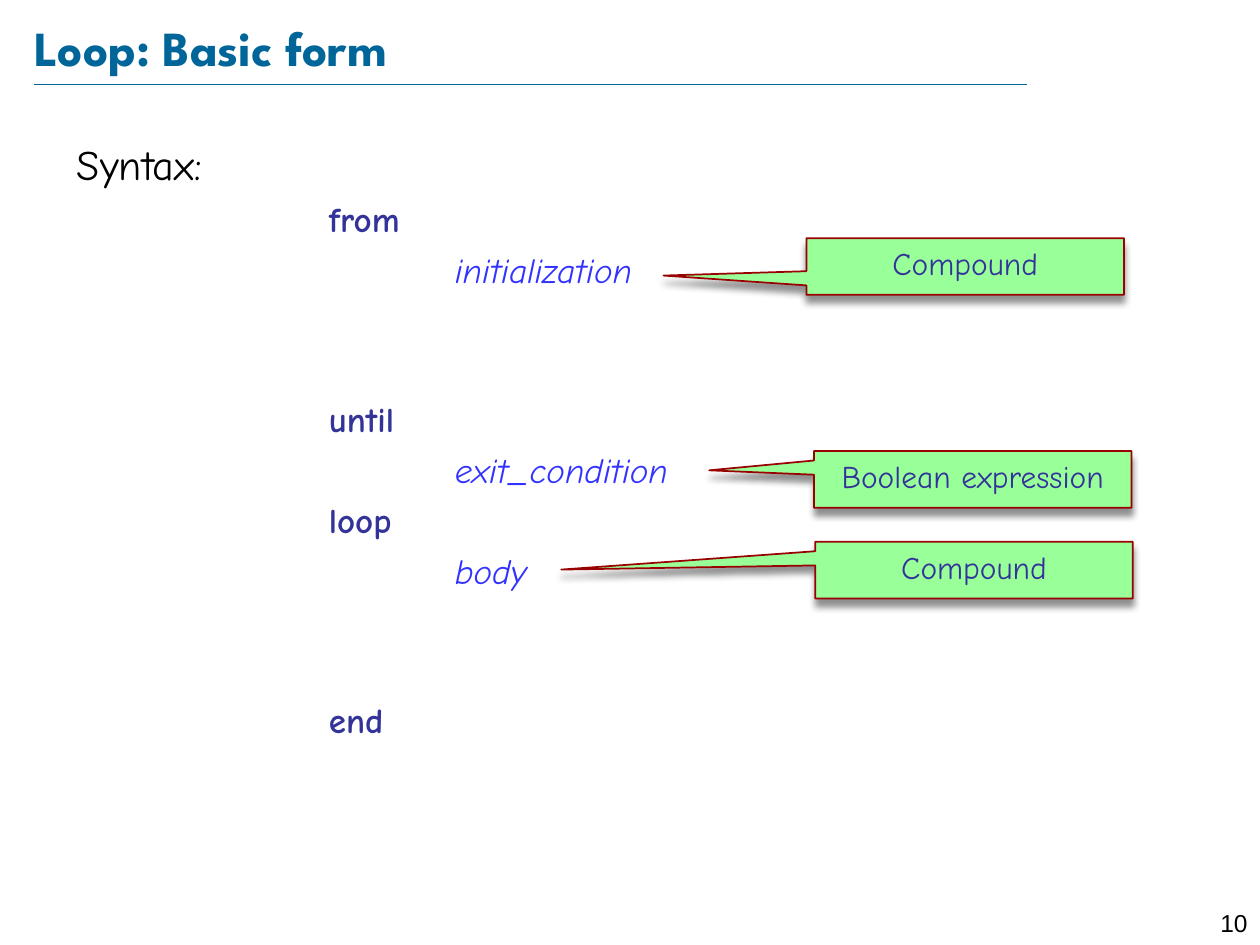
from lxml import etree
from pptx import Presentation
from pptx import util as u
from pptx.dml.color import RGBColor
from pptx.enum import shapes, text
from pptx.oxml import ns

EMU_PER_PX = 9144  # 100 px to the inch
TEAL = RGBColor(0x00, 0x66, 0x99)
BLACK = RGBColor(0x00, 0x00, 0x00)
NAVY = RGBColor(0x33, 0x33, 0x99)
BLUE = RGBColor(0x33, 0x33, 0xFF)
GREEN = RGBColor(0x99, 0xFF, 0x99)
DARK_RED = RGBColor(0x99, 0x00, 0x00)

LINE_GAP = 5    # points before each line of the syntax
BLOCK_GAP = 61  # points before a keyword that follows an open block

# text, left margin in px, points before, size, colour, bold, italic
SYNTAX = [
    ("Syntax:", 0, 0, 24, BLACK, False, False),
    ("from", 200, LINE_GAP, 20, NAVY, True, False),
    ("initialization", 300, LINE_GAP, 20, BLUE, False, True),
    ("until", 200, BLOCK_GAP, 20, NAVY, True, False),
    ("exit_condition", 300, LINE_GAP, 20, BLUE, False, True),
    ("loop", 200, LINE_GAP, 20, NAVY, True, False),
    ("body", 300, LINE_GAP, 20, BLUE, False, True),
    ("end", 200, BLOCK_GAP, 20, NAVY, True, False),
]

# text, left, top, pointer tip relative to the box
CALLOUTS = [
    ("Compound", 640, 189, (-0.95, 0.16)),
    ("Boolean expression", 646, 358, (-0.83, -0.16)),
    ("Compound", 647, 430, (-1.3, -0.01)),
]


def px(length):
    return u.Emu(length * EMU_PER_PX)


class SlideBuilder:
    title_font = "League Spartan"
    body_font = "Comic Neue"
    number_font = "Arial"

    def __init__(self, slide):
        self.slide = slide

    def place(self, shape, left, top, width, height):
        shape.left, shape.top = px(left), px(top)
        shape.width, shape.height = px(width), px(height)

    def style(self, paragraph, name, size, color, bold=False, italic=False):
        for run in paragraph.runs:
            font = run.font
            font.name, font.size = name, u.Pt(size)
            font.bold, font.italic = bold, italic
            font.color.rgb = color

    def title(self, wording, *box):
        shape = self.slide.shapes.title
        self.place(shape, *box)
        frame = shape.text_frame
        frame.text = wording
        frame.auto_size = text.MSO_AUTO_SIZE.NONE
        frame.vertical_anchor = text.MSO_ANCHOR.MIDDLE
        frame.margin_left = frame.margin_right = 0
        frame.margin_top = frame.margin_bottom = 0
        paragraph = frame.paragraphs[0]
        paragraph.alignment = text.PP_ALIGN.LEFT
        self.style(paragraph, self.title_font, 28, TEAL, bold=True)

    def rule(self, left, top, right):
        line = self.slide.shapes.add_connector(
            shapes.MSO_CONNECTOR.STRAIGHT, px(left), px(top), px(right), px(top))
        line.line.color.rgb = TEAL
        line.line.width = u.Pt(0.25)
        etree.SubElement(line._element.spPr, ns.qn("a:effectLst"))

    def syntax(self, lines, *box):
        shape = self.slide.placeholders[1]
        self.place(shape, *box)
        frame = shape.text_frame
        frame.text = "\n".join(line[0] for line in lines)
        frame.auto_size = text.MSO_AUTO_SIZE.NONE
        for paragraph, line in zip(frame.paragraphs, lines):
            _, margin, gap, size, color, bold, italic = line
            properties = paragraph._p.get_or_add_pPr()
            properties.set("marL", str(px(margin)))
            properties.set("indent", "0")
            etree.SubElement(properties, ns.qn("a:buNone"))
            paragraph.space_before = u.Pt(gap)
            self.style(paragraph, self.body_font, size, color, bold, italic)

    def callout(self, wording, left, top, tip):
        shape = self.slide.shapes.add_shape(
            shapes.MSO_SHAPE.RECTANGULAR_CALLOUT, px(left), px(top), px(252), px(45))
        shape.adjustments[0], shape.adjustments[1] = tip
        shape.fill.solid()
        shape.fill.fore_color.rgb = GREEN
        shape.line.color.rgb = DARK_RED
        shape.line.width = u.Pt(1)
        self.drop_shadow(shape)
        frame = shape.text_frame
        frame.text = wording
        frame.word_wrap = True
        frame.vertical_anchor = text.MSO_ANCHOR.MIDDLE
        frame.margin_left = frame.margin_right = 0
        frame.margin_top = frame.margin_bottom = px(5)
        paragraph = frame.paragraphs[0]
        paragraph.alignment = text.PP_ALIGN.CENTER
        paragraph.line_spacing = 0.8
        self.style(paragraph, self.body_font, 18, NAVY)

    def drop_shadow(self, shape):
        """Replace the theme's shadow with a soft one straight below."""
        shape.shadow.inherit = False
        effects = shape._element.spPr.find(ns.qn("a:effectLst"))
        shadow = etree.SubElement(
            effects, ns.qn("a:outerShdw"), blurRad=str(u.Pt(4)), dist=str(u.Pt(4)),
            dir="5400000", algn="ctr", rotWithShape="0")
        color = etree.SubElement(shadow, ns.qn("a:srgbClr"), val=str(BLACK))
        etree.SubElement(color, ns.qn("a:alpha"), val="43000")

    def page_number(self, wording, *box):
        shape = self.slide.shapes.add_textbox(*map(px, box))
        frame = shape.text_frame
        frame.text = wording
        frame.word_wrap = True
        paragraph = frame.paragraphs[0]
        paragraph.alignment = text.PP_ALIGN.RIGHT
        self.style(paragraph, self.number_font, 14, BLACK)


def main():
    presentation = Presentation()
    presentation.slide_width, presentation.slide_height = px(1000), px(750)
    layout = presentation.slide_layouts[1]
    builder = SlideBuilder(presentation.slides.add_slide(layout))
    builder.rule(27, 67, 815)
    builder.page_number("10", 945, 716, 55, 24)
    builder.title("Loop: Basic form", 27, 13, 869, 48)
    builder.syntax(SYNTAX, 51, 105, 921, 578)
    for callout in CALLOUTS:
        builder.callout(*callout)
    presentation.save("out.pptx")


if __name__ == "__main__":
    main()
